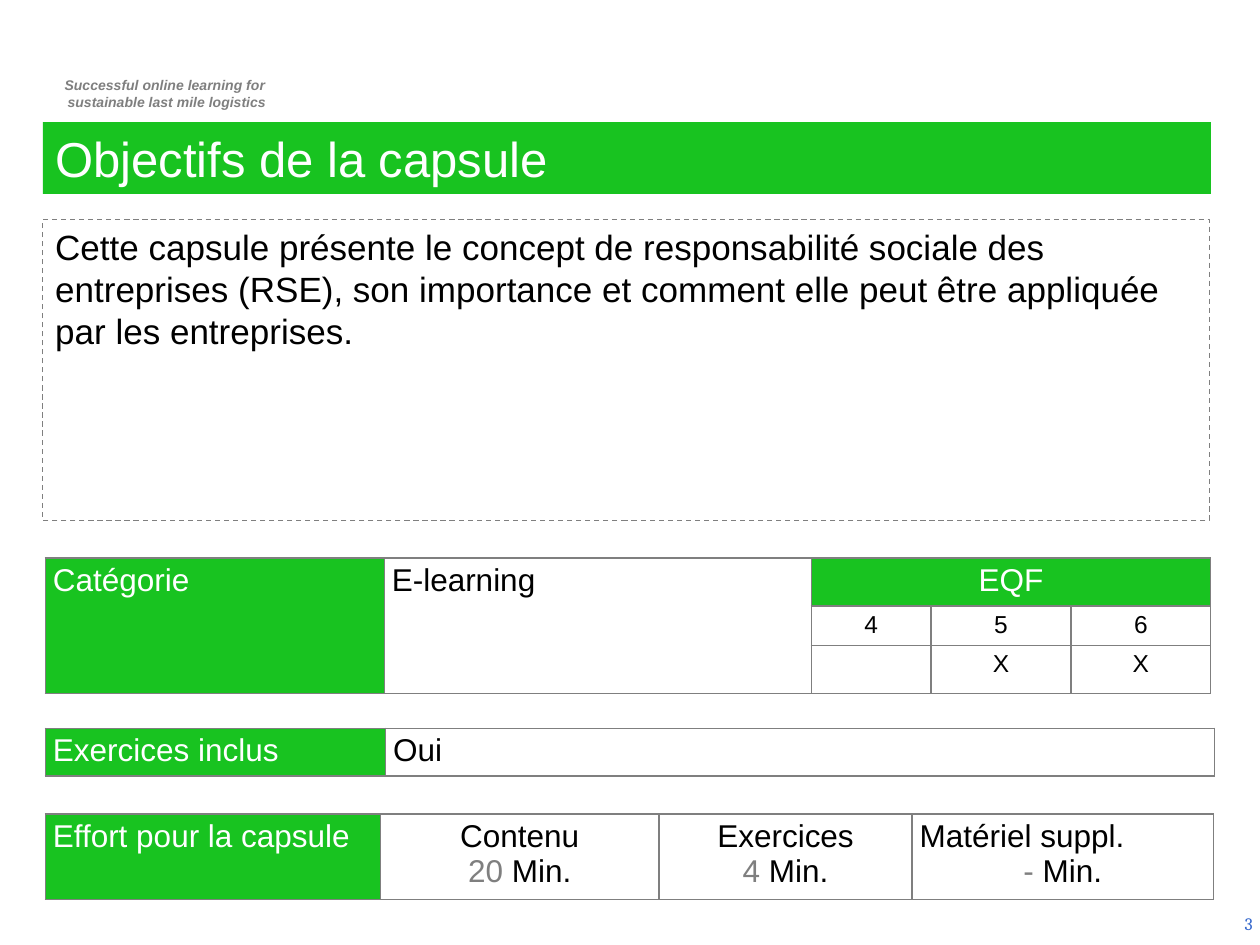
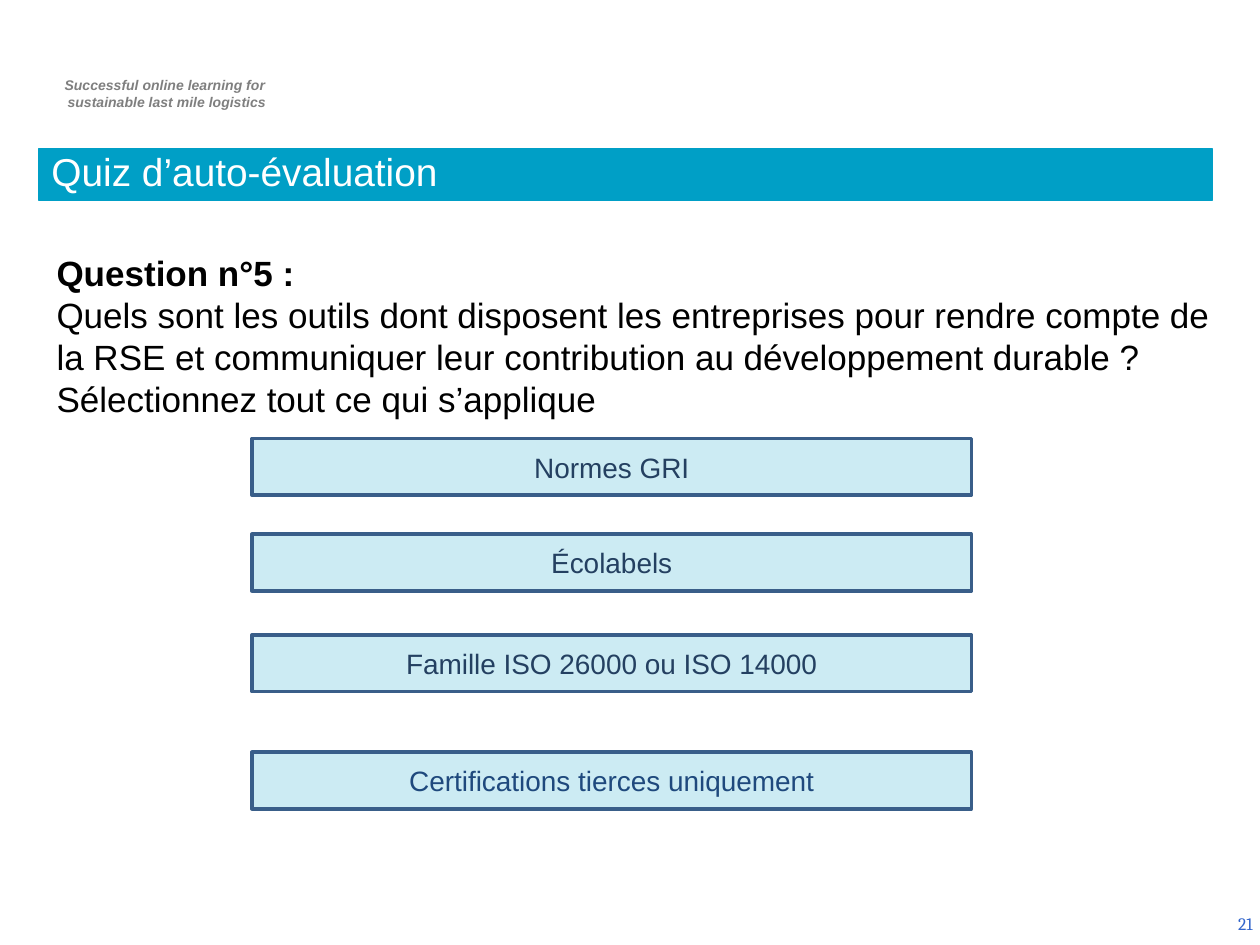
from dataclasses import dataclass
from lxml.etree import SubElement
from pptx import Presentation
from pptx.dml.color import RGBColor
from pptx.enum.dml import MSO_LINE
from pptx.enum.shapes import MSO_SHAPE
from pptx.enum.text import MSO_ANCHOR as Anchor, PP_ALIGN as Align
from pptx.oxml.ns import qn
from pptx.util import Inches, Pt


@dataclass(frozen=True)
class Theme:
    green: str = "18C320"
    blue: str = "009FC6"
    answer_line: str = "395E89"
    answer_text: str = "244061"
    last_answer_text: str = "1F497D"
    page_blue: str = "3366CC"
    grey: str = "7F7F7F"
    white: str = "FFFFFF"
    black: str = "000000"
    font: str = "Arial"
    page_font: str = "Cambria"
    title: float = 28
    quiz_title: float = 22.2
    body: float = 20
    table: float = 18
    answer: float = 16
    level: float = 14
    page: float = 10
    tagline: float = 8


THEME = Theme()
TAGLINE = ["Successful online learning for ", "sustainable last mile logistics"]


@dataclass
class Cell:
    paragraphs: list
    color: str = THEME.black
    fill: str = ""
    align: Align = Align.JUSTIFY
    size: float = THEME.table


class Deck:
    def __init__(self, theme):
        self.theme = theme
        self.presentation = Presentation()
        self.presentation.slide_width = Inches(10)
        self.presentation.slide_height = Inches(7.5)
        self.slide = None

    def add_slide(self, number):
        theme = self.theme
        self.slide = self.presentation.slides.add_slide(self.presentation.slide_layouts[6])
        tagline = self.text((0.29, 0.56, 2.03, 0.37), TAGLINE, theme.tagline,
                            theme.grey, align=Align.CENTER)
        for paragraph in tagline.text_frame.paragraphs:
            paragraph.font.bold = paragraph.font.italic = True
            paragraph._p.get_or_add_pPr().set("marL", str(Inches(0.04)))
        self.text((7.71, 7.13, 2.33, 0.4), [str(number)], theme.page, theme.page_blue,
                  align=Align.RIGHT, anchor=Anchor.MIDDLE, font=theme.page_font)

    def fill_text(self, frame, paragraphs, size, color, align=Align.LEFT, font=None):
        for index, content in enumerate(paragraphs):
            paragraph = frame.paragraphs[0] if index == 0 else frame.add_paragraph()
            paragraph.alignment = align
            paragraph.font.size = Pt(size)
            paragraph.font.name = font or self.theme.font
            if isinstance(content, str):
                paragraph.font.color.rgb = RGBColor.from_string(color)
                paragraph.add_run().text = content
                continue
            for text, run_color in content:
                run = paragraph.add_run()
                run.text = text
                run.font.color.rgb = RGBColor.from_string(run_color)

    def text(self, box, paragraphs, size, color, align=Align.LEFT, anchor=Anchor.TOP, font=None):
        shape = self.slide.shapes.add_textbox(*map(Inches, box))
        shape.text_frame.word_wrap = True
        shape.text_frame.vertical_anchor = anchor
        self.fill_text(shape.text_frame, paragraphs, size, color, align, font)
        return shape

    def box(self, box, text, size, color, fill=None, line=None, width=0.75, alpha=None,
            align=Align.LEFT, anchor=Anchor.TOP):
        shape = self.slide.shapes.add_shape(MSO_SHAPE.RECTANGLE, *map(Inches, box))
        shape.shadow.inherit = False
        if fill:
            shape.fill.solid()
            shape.fill.fore_color.rgb = RGBColor.from_string(fill)
        else:
            shape.fill.background()
        if alpha:
            fill_color = shape._element.spPr.find(qn("a:solidFill"))[0]
            SubElement(fill_color, qn("a:alpha")).set("val", str(alpha * 1000))
        if line:
            shape.line.color.rgb = RGBColor.from_string(line)
            shape.line.width = Pt(width)
        else:
            shape.line.fill.background()
        shape.text_frame.word_wrap = True
        shape.text_frame.vertical_anchor = anchor
        self.fill_text(shape.text_frame, [text], size, color, align)
        return shape

    def border(self, cell):
        properties = cell._tc.get_or_add_tcPr()
        for index, side in enumerate(("a:lnL", "a:lnR", "a:lnT", "a:lnB")):
            line = properties.makeelement(qn(side), {"w": str(Pt(1))})
            SubElement(SubElement(line, qn("a:solidFill")), qn("a:srgbClr")).set("val", self.theme.grey)
            properties.insert(index, line)

    def table(self, left, top, widths, heights, cells, merges=()):
        table = self.slide.shapes.add_table(
            len(heights), len(widths), Inches(left), Inches(top),
            Inches(sum(widths)), Inches(sum(heights))).table
        table.first_row = table.horz_banding = False
        for column, width in zip(table.columns, widths):
            column.width = Inches(width)
        for row, height in zip(table.rows, heights):
            row.height = Inches(height)
        for start, end in merges:
            table.cell(*start).merge(table.cell(*end))
        for cell in table.iter_cells():
            cell.margin_left = cell.margin_right = Inches(0.06)
            cell.margin_top = cell.margin_bottom = Inches(0.04)
            cell.fill.background()
            self.border(cell)
        for position, content in cells.items():
            cell = table.cell(*position)
            if content.fill:
                cell.fill.solid()
                cell.fill.fore_color.rgb = RGBColor.from_string(content.fill)
            self.fill_text(cell.text_frame, content.paragraphs, content.size, content.color, content.align)
        return table


def label(text, align=Align.JUSTIFY):
    return Cell([text], THEME.white, THEME.green, align)


def level(text):
    return Cell([text], align=Align.CENTER, size=THEME.level)


def minutes(value):
    return [(f"{value} ", THEME.grey), ("Min.", THEME.black)]


def effort(name, value):
    return Cell([name, minutes(value)], align=Align.CENTER)


def build_objectives(deck):
    deck.add_slide(3)
    deck.box((0.34, 0.97, 9.27, 0.57), "Objectifs de la capsule", THEME.title, THEME.white, THEME.green)
    summary = deck.box(
        (0.34, 1.74, 9.26, 2.39),
        "Cette capsule présente le concept de responsabilité sociale des entreprises (RSE), "
        "son importance et comment elle peut être appliquée par les entreprises.",
        THEME.body, THEME.black, line=THEME.grey)
    summary.line.dash_style = MSO_LINE.DASH

    category = {(0, 0): label("Catégorie"), (0, 1): Cell(["E-learning"]),
                (0, 2): label("EQF", Align.CENTER)}
    category.update({(1, 2 + index): level(text) for index, text in enumerate("456")})
    category.update({(2, column): level("X") for column in (3, 4)})
    deck.table(0.36, 4.43, [2.69, 3.39, 0.95, 1.11, 1.11], [0.37, 0.31, 0.37], category,
               [((0, 0), (2, 0)), ((0, 1), (2, 1)), ((0, 2), (0, 4))])

    deck.table(0.36, 5.78, [2.7, 6.58], [0.37],
               {(0, 0): label("Exercices inclus"), (0, 1): Cell(["Oui"])})

    efforts = deck.table(0.36, 6.46, [2.66, 2.21, 2.01, 2.39], [0.67], {
        (0, 0): label("Effort pour la capsule"),
        (0, 1): effort("Contenu", 20),
        (0, 2): effort("Exercices", 4),
        (0, 3): effort("Matériel suppl.", "-")})
    efforts.cell(0, 3).text_frame.paragraphs[0].alignment = Align.LEFT


def build_quiz(deck):
    deck.add_slide(21)
    title = deck.box((0.31, 1.18, 9.31, 0.41), "Quiz d’auto-évaluation", THEME.quiz_title, THEME.white,
                     THEME.blue, THEME.blue, anchor=Anchor.BOTTOM)
    title.text_frame.paragraphs[0].line_spacing = 0.8
    question = deck.text((0.35, 1.95, 9.48, 1.45), [
        "Question n°5 :",
        "Quels sont les outils dont disposent les entreprises pour rendre compte de la RSE et "
        "communiquer leur contribution au développement durable ? Sélectionnez tout ce qui s’applique",
    ], THEME.body, THEME.black)
    question.text_frame.paragraphs[0].font.bold = True
    answers = [
        (3.48, "Normes GRI", THEME.answer_text),
        (4.24, "Écolabels", THEME.answer_text),
        (5.04, "Famille ISO 26000 ou ISO 14000", THEME.answer_text),
        (5.97, "Certifications tierces uniquement", THEME.last_answer_text),
    ]
    for top, answer, color in answers:
        deck.box((2, top, 5.71, 0.45), answer, THEME.answer, color, THEME.blue, THEME.answer_line,
                 width=2, alpha=20, align=Align.CENTER, anchor=Anchor.MIDDLE)


def main():
    deck = Deck(THEME)
    build_objectives(deck)
    build_quiz(deck)
    deck.presentation.save("out.pptx")


if __name__ == "__main__":
    main()
